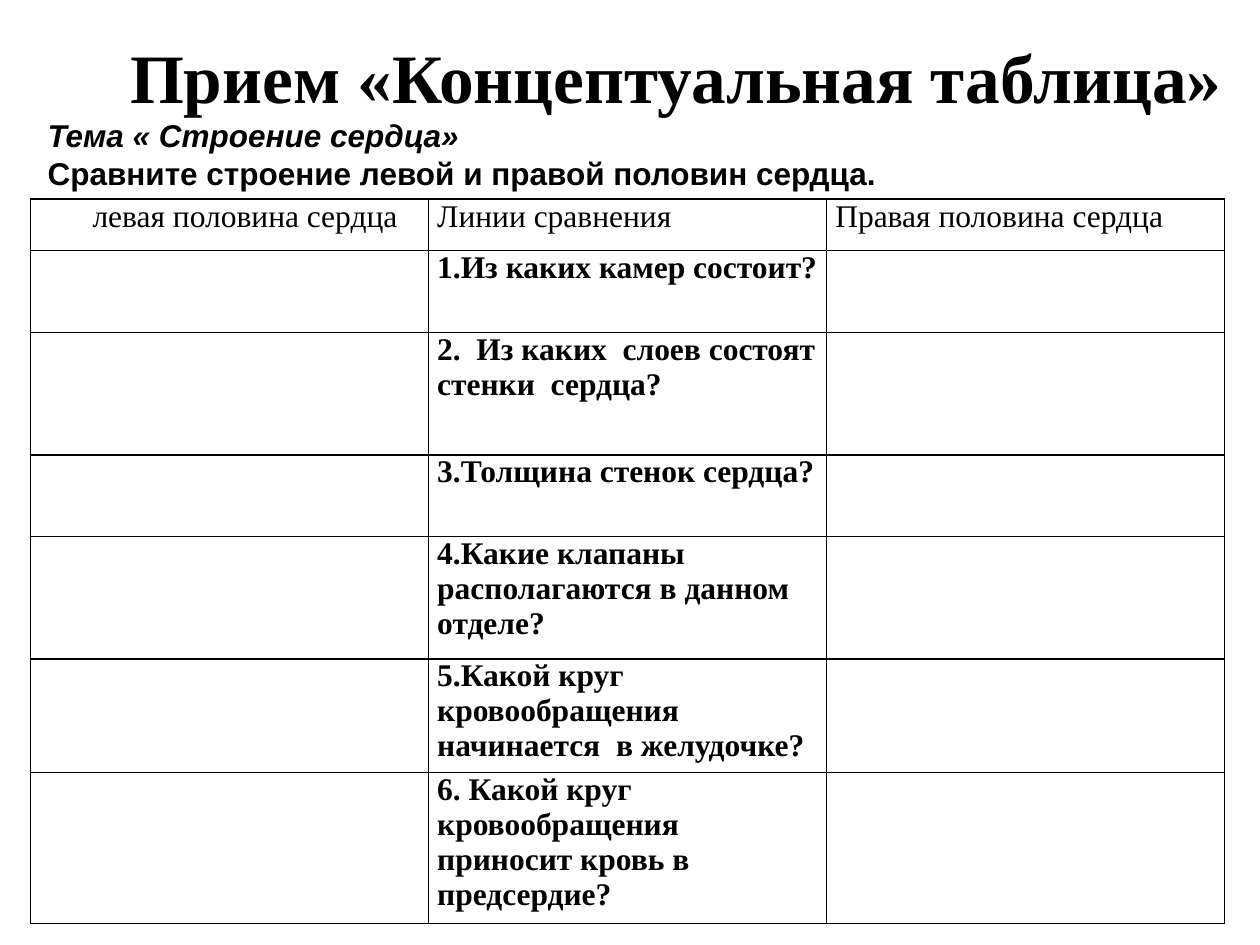
from lxml import etree
from pptx import Presentation
from pptx import util as u
from pptx.dml.color import RGBColor
from pptx.enum import text
from pptx.oxml import ns

COLORS = {"ink": "000000", "paper": "FFFFFF"}
SERIF, SANS = "Times New Roman", "Arial"
BODY_SIZE = 18

TABLE_LEFT, TABLE_TOP = 0.24, 1.58
COLUMN_WIDTH = 3.16
HEADERS = ["левая половина сердца", "Линии сравнения", "Правая половина сердца"]
HEADER_HEIGHT = 0.41
# Question and row height
QUESTIONS = [
    ("1.Из каких камер состоит?", 0.65),
    ("2.  Из каких  слоев состоят стенки  сердца?", 0.97),
    ("3.Толщина стенок сердца?", 0.65),
    ("4.Какие клапаны располагаются в данном отделе?", 0.97),
    ("5.Какой круг кровообращения  начинается  в желудочке?", 0.9),
    ("6. Какой круг кровообращения приносит кровь в предсердие?", 1.2),
]


def format_paragraph(paragraph, font, size=BODY_SIZE, bold=False, italic=False):
    for run in paragraph.runs:
        run.font.name = font
        run.font.size = u.Pt(size)
        run.font.bold = bold
        run.font.italic = italic
        run.font.color.rgb = RGBColor.from_string(COLORS["ink"])


def set_title(slide, title):
    shape = slide.shapes.title
    shape.left, shape.top = u.Inches(0.87), u.Inches(0.33)
    shape.width, shape.height = u.Inches(8.99), u.Inches(0.54)
    frame = shape.text_frame
    frame.text = title
    frame.word_wrap = True
    frame.auto_size = text.MSO_AUTO_SIZE.NONE
    frame.vertical_anchor = text.MSO_ANCHOR.MIDDLE
    frame.paragraphs[0].alignment = text.PP_ALIGN.CENTER
    format_paragraph(frame.paragraphs[0], SERIF, 39.6, bold=True)


def add_task(slide, topic, task):
    box = slide.shapes.add_textbox(
        u.Inches(0.28), u.Inches(0.87), u.Inches(9.17), u.Inches(0.71))
    frame = box.text_frame
    frame.word_wrap = True
    frame.auto_size = text.MSO_AUTO_SIZE.SHAPE_TO_FIT_TEXT
    frame.text = topic
    frame.add_paragraph().text = task
    format_paragraph(frame.paragraphs[0], SANS, bold=True, italic=True)
    format_paragraph(frame.paragraphs[1], SANS, bold=True)


def add_borders(cell, width=1):
    properties = cell._tc.get_or_add_tcPr()
    for position, side in enumerate(("lnL", "lnR", "lnT", "lnB")):
        line = etree.Element(ns.qn(f"a:{side}"), w=str(u.Pt(width)))
        fill = etree.SubElement(line, ns.qn("a:solidFill"))
        etree.SubElement(fill, ns.qn("a:srgbClr"), val=COLORS["ink"])
        properties.insert(position, line)


def fill_cell(cell, content, bold):
    cell.margin_left = cell.margin_right = u.Inches(0.07)
    cell.margin_top = cell.margin_bottom = 0
    cell.fill.background()
    add_borders(cell)
    if content:
        cell.text_frame.text = content
        format_paragraph(cell.text_frame.paragraphs[0], SERIF, bold=bold)


def add_comparison_table(slide):
    rows = [HEADERS] + [["", question, ""] for question, _ in QUESTIONS]
    heights = [HEADER_HEIGHT] + [height for _, height in QUESTIONS]
    table = slide.shapes.add_table(
        len(rows), len(HEADERS), u.Inches(TABLE_LEFT), u.Inches(TABLE_TOP),
        u.Inches(COLUMN_WIDTH * len(HEADERS)), u.Inches(sum(heights))).table
    table.first_row = table.horz_banding = False
    for column in table.columns:
        column.width = u.Inches(COLUMN_WIDTH)
    for row_index, (row, height) in enumerate(zip(rows, heights)):
        table.rows[row_index].height = u.Inches(height)
        for column_index, content in enumerate(row):
            fill_cell(table.cell(row_index, column_index), content, bold=row_index > 0)

    # The first heading is centred and shifted right
    first = table.cell(0, 0)
    first.margin_left = u.Inches(0.32)
    first.text_frame.paragraphs[0].alignment = text.PP_ALIGN.CENTER


def main():
    presentation = Presentation()
    presentation.slide_width, presentation.slide_height = u.Inches(10), u.Inches(7.5)
    slide = presentation.slides.add_slide(presentation.slide_layouts[5])
    slide.background.fill.solid()
    slide.background.fill.fore_color.rgb = RGBColor.from_string(COLORS["paper"])

    set_title(slide, "Прием «Концептуальная таблица» ")
    add_comparison_table(slide)
    add_task(slide, "Тема « Строение сердца»",
             "Сравните строение левой и правой половин сердца.")
    presentation.save("out.pptx")


if __name__ == "__main__":
    main()
